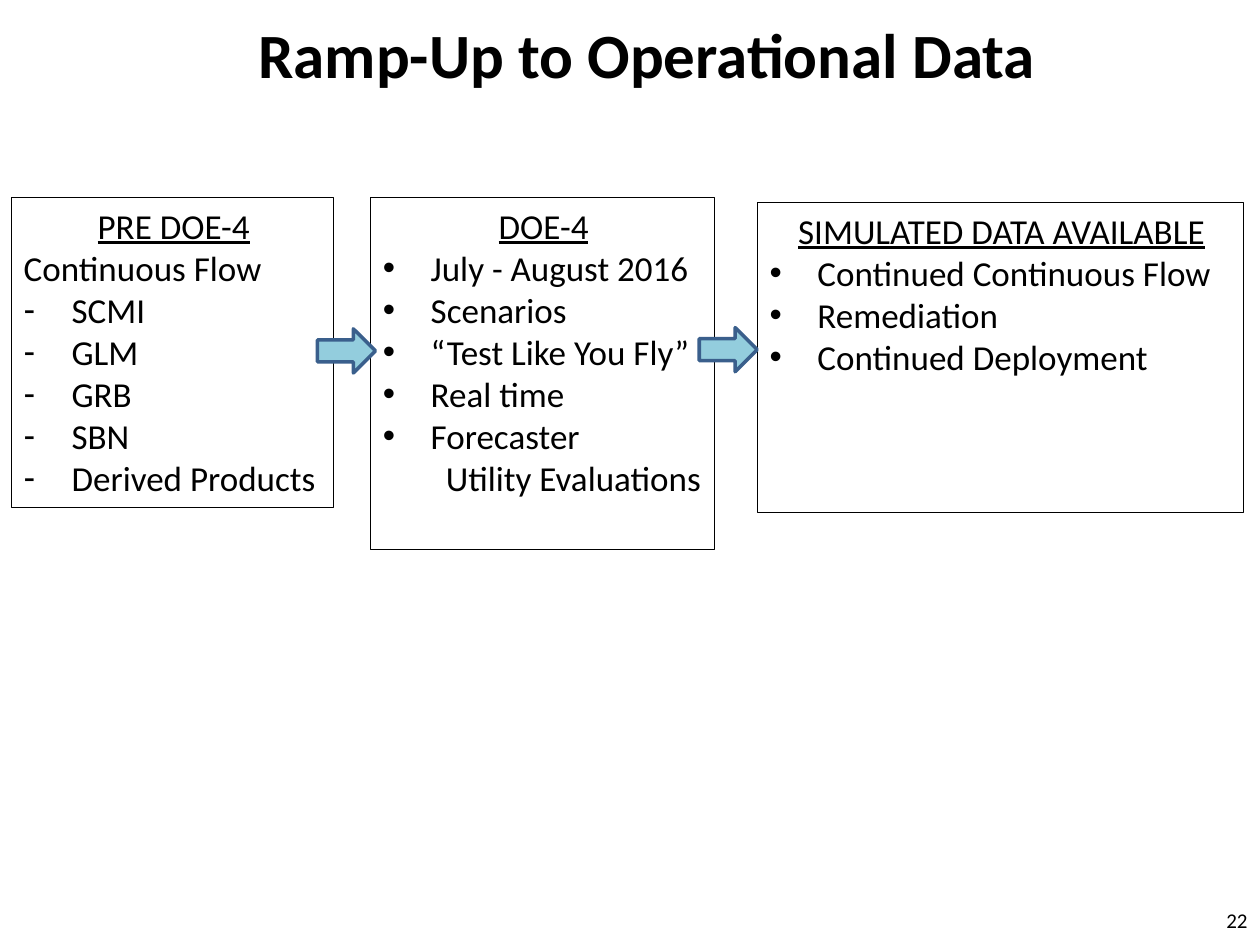
"""Build the slide on ramping up to operational data."""
from lxml import etree
from pptx import Presentation
from pptx.dml.color import RGBColor
from pptx.enum import shapes, text
from pptx.oxml import ns
from pptx.util import Inches, Pt

COLORS = {"ink": "000000", "paper": "FFFFFF", "arrow": "93CDDD", "arrow_edge": "3A5F8C"}
FONT = "Calibri"
HANGING = 0.38
STAGES = [
    ((0.09, 1.57, 2.56, 2.46), None, "PRE DOE-4", [
        ("Continuous Flow", None, 0),
        *((item, "-", 0) for item in ("SCMI", "GLM", "GRB", "SBN", "Derived Products")),
    ]),
    ((2.94, 1.57, 2.73, 2.79), None, "DOE-4", [
        *((item, "•", 0) for item in (
            "July - August 2016", "Scenarios", "“Test Like You Fly”", "Real time", "Forecaster")),
        ("Utility Evaluations", None, 1),
    ]),
    ((6.01, 1.61, 3.86, 2.46), "paper", "SIMULATED DATA AVAILABLE", [
        (item, "•", 0) for item in (
            "Continued Continuous Flow", "Remediation", "Continued Deployment")
    ]),
]
ARROWS = [(2.52, 2.61, 0.46, 0.35), (5.55, 2.6, 0.46, 0.35)]


def color(name):
    return RGBColor.from_string(COLORS[name])


def style(paragraph, size, alignment, bold=False, underline=False):
    paragraph.alignment = alignment
    font = paragraph.font
    font.name, font.size = FONT, Pt(size)
    font.bold, font.underline = bold, underline
    font.color.rgb = color("ink")


def set_indent(paragraph, bullet, level):
    properties = paragraph._p.get_or_add_pPr()
    properties.set("marL", str(Inches(HANGING + 0.5 * level)))
    properties.set("indent", str(-Inches(HANGING)))
    if bullet:
        etree.SubElement(properties, ns.qn("a:buFont")).set("typeface", "Arial")
        etree.SubElement(properties, ns.qn("a:buChar")).set("char", bullet)


def add_label(slide, box, wording, size, alignment, bold=False):
    frame = slide.shapes.add_textbox(*map(Inches, box)).text_frame
    frame.word_wrap = True
    frame.vertical_anchor = text.MSO_ANCHOR.MIDDLE
    paragraph = frame.paragraphs[0]
    paragraph.text = wording
    style(paragraph, size, alignment, bold)


def add_shape(slide, kind, box, fill, line, width):
    shape = slide.shapes.add_shape(kind, *map(Inches, box))
    shape.shadow.inherit = False
    if fill:
        shape.fill.solid()
        shape.fill.fore_color.rgb = color(fill)
    else:
        shape.fill.background()
    shape.line.color.rgb = color(line)
    shape.line.width = Pt(width)
    return shape


def add_stage(slide, box, fill, heading, items):
    shape = add_shape(slide, shapes.MSO_SHAPE.RECTANGLE, box, fill, "ink", 0.75)
    frame = shape.text_frame
    frame.word_wrap = True
    frame.margin_right = Inches(0.08)
    frame.vertical_anchor = text.MSO_ANCHOR.TOP
    paragraph = frame.paragraphs[0]
    paragraph.text = heading
    style(paragraph, 20, text.PP_ALIGN.CENTER, underline=True)
    for wording, bullet, level in items:
        paragraph = frame.add_paragraph()
        paragraph.text = wording
        paragraph.level = level
        if bullet or level:
            set_indent(paragraph, bullet, level)
        style(paragraph, 20, text.PP_ALIGN.LEFT)


def main():
    presentation = Presentation()
    presentation.slide_width, presentation.slide_height = Inches(10), Inches(7.5)
    slide = presentation.slides.add_slide(presentation.slide_layouts[6])
    add_label(slide, (1.26, -0.2, 7.75, 1.25), "Ramp-Up to Operational Data", 36,
              text.PP_ALIGN.CENTER, bold=True)
    add_label(slide, (7.67, 7.1, 2.33, 0.4), "22", 12, text.PP_ALIGN.RIGHT)
    for stage in STAGES:
        add_stage(slide, *stage)
    for box in ARROWS:
        add_shape(slide, shapes.MSO_SHAPE.RIGHT_ARROW, box, "arrow", "arrow_edge", 2)
    presentation.save("out.pptx")


if __name__ == "__main__":
    main()
